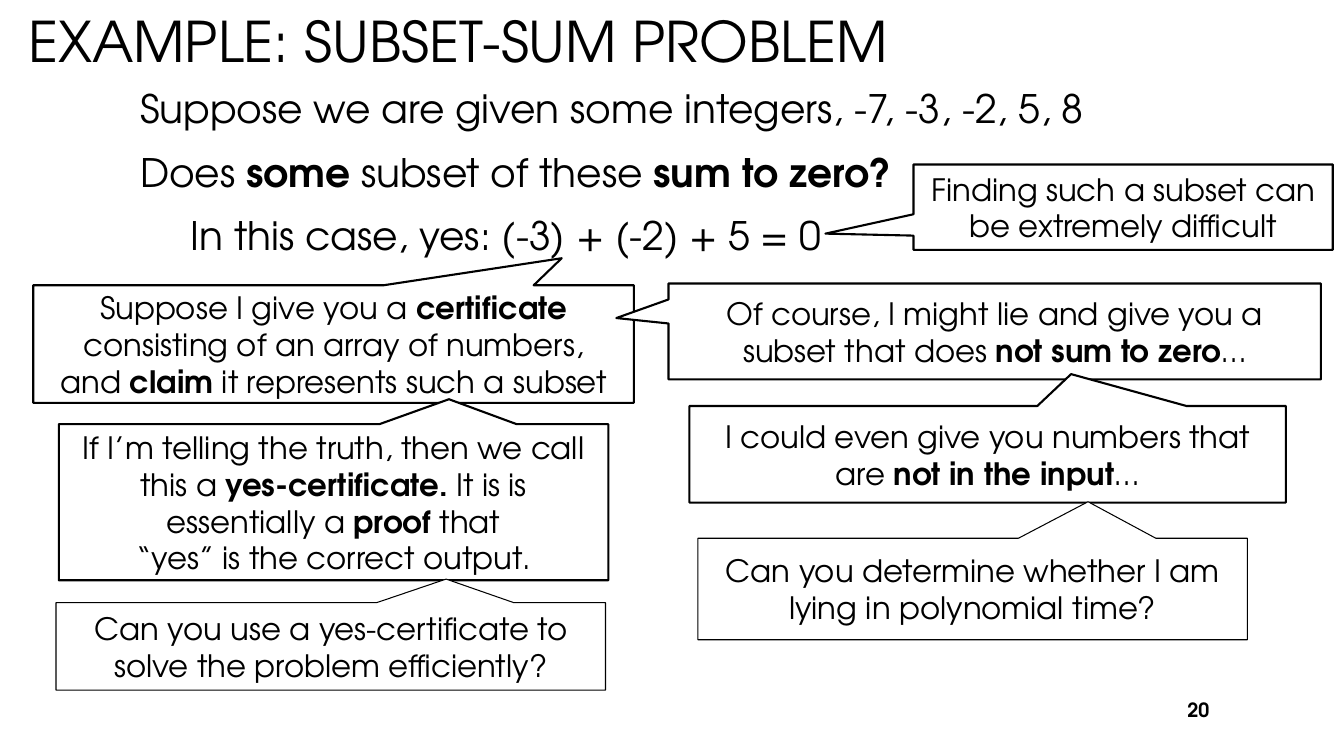
import pptx
import pptx.util
import pptx.dml.color
import pptx.enum.shapes
import pptx.enum.text

Pt = pptx.util.Pt
ALIGN = pptx.enum.text.PP_ALIGN
ANCHOR = pptx.enum.text.MSO_ANCHOR


class SlideBuilder:
    font_name = "TeX Gyre Adventor"
    colours = {"ink": "000000", "paper": "FFFFFF"}

    def __init__(self, deck):
        self.slide = deck.slides.add_slide(deck.slide_layouts[6])

    def colour(self, name):
        return pptx.dml.color.RGBColor.from_string(self.colours[name])

    def style(self, para, size, align, bold=None):
        para.alignment = align
        para.font.name = self.font_name
        para.font.size = Pt(size)
        para.font.bold = bold
        para.font.color.rgb = self.colour("ink")

    def add_spans(self, para, marked_text):
        for index, piece in enumerate(marked_text.split("**")):
            for number, line in enumerate(piece.split("\n")):
                if number:
                    para.add_line_break()
                if line:
                    span = para.add_run()
                    span.text = line
                    if index % 2:
                        span.font.bold = True

    def frame(self, box, anchor):
        box.text_frame.word_wrap = True
        box.text_frame.vertical_anchor = anchor
        return box.text_frame

    def text(self, bounds, content, size, align=ALIGN.LEFT, bold=None):
        box = self.slide.shapes.add_textbox(*map(Pt, bounds))
        para = self.frame(box, ANCHOR.MIDDLE).paragraphs[0]
        self.style(para, size, align, bold)
        self.add_spans(para, content)

    def statements(self, bounds, lines, size):
        box = self.slide.shapes.add_textbox(*map(Pt, bounds))
        frame = self.frame(box, ANCHOR.TOP)
        for index, (indent, content) in enumerate(lines):
            para = frame.add_paragraph() if index else frame.paragraphs[0]
            self.style(para, size, ALIGN.LEFT)
            para.space_before = Pt(size * 0.2)
            para.space_after = Pt(6)
            para._p.get_or_add_pPr().set("marL", str(Pt(indent)))
            self.add_spans(para, content)

    def callout(self, bounds, tip, content, line_width=1.5):
        kind = pptx.enum.shapes.MSO_SHAPE.RECTANGULAR_CALLOUT
        box = self.slide.shapes.add_shape(kind, *map(Pt, bounds))
        box.adjustments[0], box.adjustments[1] = tip
        box.shadow.inherit = False
        box.fill.solid()
        box.fill.fore_color.rgb = self.colour("paper")
        box.line.color.rgb = self.colour("ink")
        box.line.width = Pt(line_width)
        para = self.frame(box, ANCHOR.MIDDLE).paragraphs[0]
        self.style(para, 22, ALIGN.CENTER)
        self.add_spans(para, content)


def main():
    deck = pptx.Presentation()
    deck.slide_width, deck.slide_height = Pt(960), Pt(540)
    page = SlideBuilder(deck)

    page.text((13, 0, 939, 57), "EXAMPLE: SUBSET-SUM PROBLEM", 40)
    page.statements((70.5, 57, 780, 165.5), [
        (22.5, "Suppose we are given some integers, -7, -3, -2, 5, 8"),
        (22.5, "Does **some** subset of these **sum to zero?**"),
        (58.5, "In this case, yes: (-3) + (-2) + 5 = 0"),
    ], 28)

    page.callout((23.75, 203.75, 429, 84), (0.38, -0.73),
                 "Suppose I give you a **certificate** consisting of an array of numbers,\n"
                 "and **claim** it represents such a subset")
    page.callout((477.5, 202.5, 466, 68.5), (-0.58, -0.14),
                 "Of course, I might lie and give you a subset that does "
                 "**not sum to zero**…")
    page.callout((42, 303, 392.5, 111.5), (0.21, -0.66),
                 "If I’m telling the truth, then we call this a **yes-certificate. **"
                 "It is is essentially a **proof **that\n“yes” is the correct output.")
    page.callout((492.5, 290, 426, 69), (0.14, -0.83),
                 "I could even give you numbers that are **not in the input**…")
    page.callout((652.5, 117.5, 299.5, 61), (-0.71, 0.31),
                 "Finding such a subset can be extremely difficult")
    page.callout((40, 430.5, 392.5, 62.5), (0.21, -0.77),
                 "Can you use a yes-certificate to solve the problem efficiently?", 0.75)
    page.callout((498.5, 384.5, 392.5, 72.5), (0.21, -0.86),
                 "Can you determine whether I am lying in polynomial time?", 0.75)

    page.text((828, 492.5, 43, 29), "20", 14, ALIGN.RIGHT, True)
    deck.save("out.pptx")


if __name__ == "__main__":
    main()
